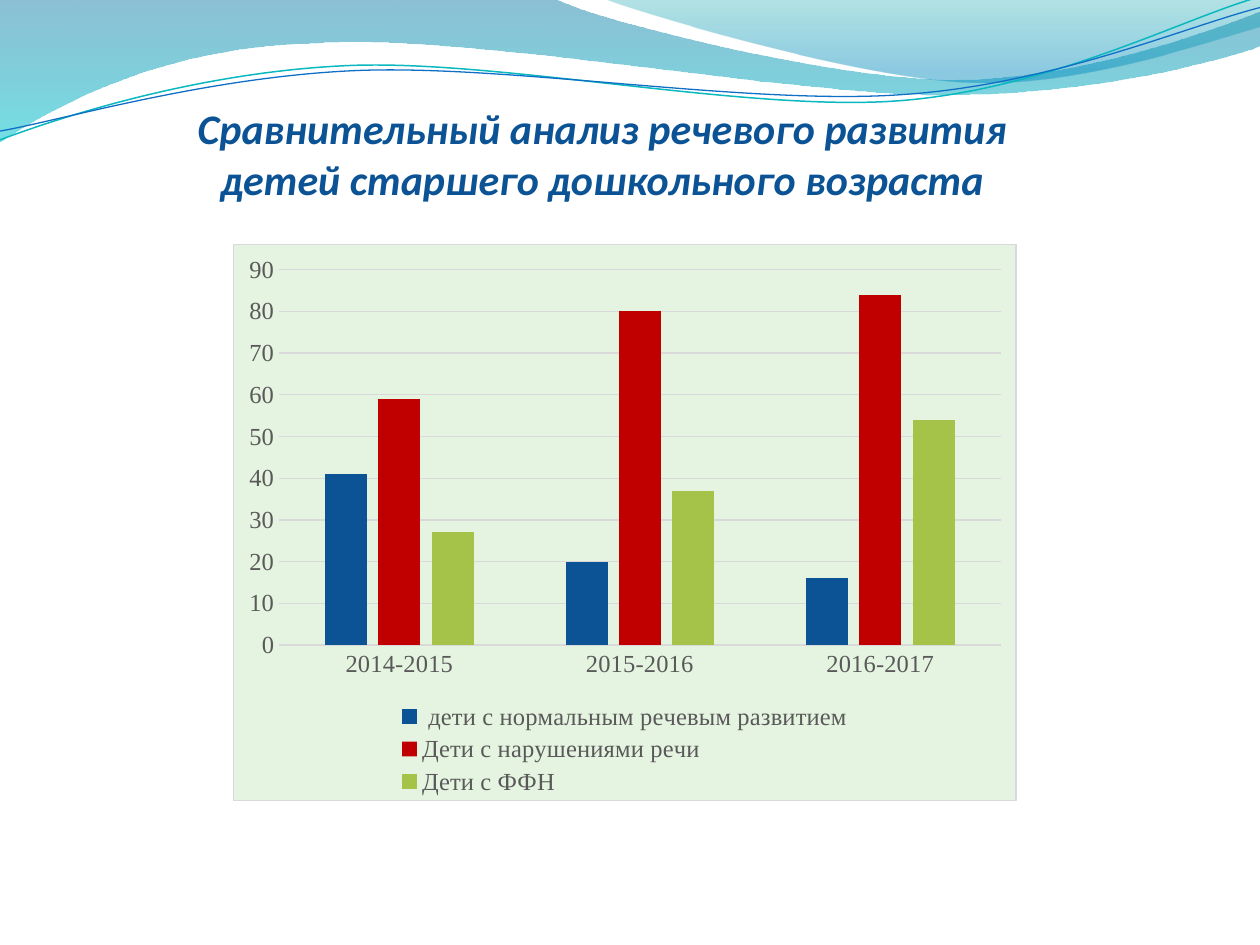
from math import cos, radians, sin

from lxml import etree
from pptx import Presentation
from pptx.chart.data import CategoryChartData
from pptx.dml.color import RGBColor
from pptx.enum.chart import XL_CHART_TYPE, XL_LEGEND_POSITION, XL_TICK_MARK
from pptx.enum.text import MSO_ANCHOR, PP_ALIGN
from pptx.oxml import parse_xml
from pptx.oxml.ns import nsdecls, qn
from pptx.util import Pt

COLUMNS = XL_CHART_TYPE.COLUMN_CLUSTERED
LEGEND_BOTTOM = XL_LEGEND_POSITION.BOTTOM
NO_TICK = XL_TICK_MARK.NONE
CENTER = PP_ALIGN.CENTER
ANCHOR_BOTTOM = MSO_ANCHOR.BOTTOM

THEME = {
    "title": "0B5394", "title_font": "Calibri", "title_size": 24,
    "chart_text": "595959", "chart_font": "Times New Roman", "chart_size": 14,
    "grid": "D9D9D9", "grid_width": 0.75, "chart_fill": "E5F4E0",
    "series": ["0B5394", "C00000", "A5C249"],
}

TITLE = "Сравнительный анализ речевого развития детей старшего дошкольного возраста"
TITLE_BOX = (87.84, 54.4, 512.64, 61.92)
CHART_BOX = (133.2, 139.5, 447.84, 318.24)
YEARS = ["2014-2015", "2015-2016", "2016-2017"]
SERIES = [
    (" дети с нормальным речевым развитием", (41, 20, 16)),
    ("Дети с нарушениями речи", (59, 80, 84)),
    ("Дети с ФФН", (27, 37, 54)),
]

# Outlines in points: a pair is a straight step, six numbers are a Bézier step.
# Gradient stops are (position, colour, opacity in percent).
BANDS = [
    {"outline": [(0, 0), (316.8, -0.72),
                 (342.72, 12.24, 478.08, 45.36, 545.76, 45.36),
                 (614.16, 45.36, 689.76, 18.72, 720, 6.48), (720.72, 25.92),
                 (707.76, 31.68, 626.4, 54.72, 537.12, 54),
                 (447.84, 54, 275.04, 20.16, 185.04, 24.48),
                 (92.88, 25.92, 33.12, 59.76, -0.72, 81.36)],
     "stops": [(0, "0074A1", 45), (1, "00C6CF", 55)]},
    {"outline": [(344.88, -0.72),
                 (366.48, 7.92, 491.04, 44.64, 553.68, 46.8),
                 (616.32, 49.68, 691.92, 23.04, 720, 15.12), (720, 0)],
     "stops": [(0, "00A1A9", 30), (0.8, "008BBF", 45)]},
]
WAVE_ANGLE = -2.7
WAVES = [
    {"outline": [(0, 79.92),
                 (34.56, 66.96, 113.76, 41.04, 199.44, 37.44),
                 (284.4, 33.84, 426.96, 64.08, 513.36, 57.6),
                 (599.76, 51.12, 675.36, 10.8, 718.56, -1.44)],
     "center": (359.28, 41.4), "color": "0AB8BF", "width": 0.85},
    {"outline": [(0, 74.88),
                 (33.84, 69.12, 118.08, 43.92, 203.76, 40.32),
                 (290.16, 36.72, 429.84, 60.48, 516.24, 54),
                 (601.92, 48.24, 677.52, 15.12, 720, 4.32)],
     "center": (359.64, 42.48), "color": "0F6FC6", "width": 0.75},
]


def rgb(value):
    return RGBColor.from_string(value)


def step_points(step):
    return list(zip(step[::2], step[1::2]))


def turn_step(step, center, angle):
    """Turn every point of a step clockwise about the center."""
    cosine, sine = cos(radians(angle)), sin(radians(angle))
    turned = []
    for x, y in step_points(step):
        across, down = x - center[0], y - center[1]
        turned += [center[0] + across * cosine - down * sine,
                   center[1] + across * sine + down * cosine]
    return tuple(turned)


def add_outline(slide, outline, close):
    """Build a freeform, joining the three points of each Bézier step into a curve."""
    start, *rest = [(Pt(x), Pt(y)) for step in outline for x, y in step_points(step)]
    builder = slide.shapes.build_freeform(*start)
    builder.add_line_segments(rest, close=close)
    shape = builder.convert_to_shape()
    shape.shadow.inherit = False
    lines = iter(list(shape._element.spPr.iter(qn("a:lnTo"))))
    for step in outline[1:]:
        segments = [next(lines) for _ in step_points(step)]
        if len(segments) == 3:
            curve = etree.Element(qn("a:cubicBezTo"))
            segments[0].addprevious(curve)
            for segment in segments:
                curve.append(segment[0])
                segment.getparent().remove(segment)
    return shape


def add_band(slide, outline, stops):
    shape = add_outline(slide, outline, close=True)
    shape.line.fill.background()
    shape.fill.gradient()
    shape.fill.gradient_angle = 270
    for gradient_stop, (position, color, _) in zip(shape.fill.gradient_stops, stops):
        gradient_stop.position = position
        gradient_stop.color.rgb = rgb(color)
    colors = shape._element.spPr.iter(qn("a:srgbClr"))
    for element, (_, _, opacity) in zip(colors, stops):
        etree.SubElement(element, qn("a:alpha")).set("val", str(opacity * 1000))


def add_wave(slide, outline, center, color, width):
    level = [turn_step(step, center, -WAVE_ANGLE) for step in outline]
    shape = add_outline(slide, level, close=False)
    shape.rotation = WAVE_ANGLE
    shape.fill.background()
    shape.line.color.rgb = rgb(color)
    shape.line.width = Pt(width)


def format_font(font, name, size, color, bold=False, italic=False):
    font.name, font.size = name, Pt(size)
    font.bold, font.italic = bold, italic
    font.color.rgb = rgb(color)


def add_text(slide, text, box, align, anchor, margins, **font_format):
    frame = slide.shapes.add_textbox(*map(Pt, box)).text_frame
    frame.word_wrap = True
    frame.vertical_anchor = anchor
    (frame.margin_left, frame.margin_top,
     frame.margin_right, frame.margin_bottom) = map(Pt, margins)
    paragraph = frame.paragraphs[0]
    paragraph.alignment = align
    run = paragraph.add_run()
    run.text = text
    format_font(run.font, **font_format)


def style_grid_line(line):
    line.color.rgb = rgb(THEME["grid"])
    line.width = Pt(THEME["grid_width"])


def fill_chart_area(chart):
    area = parse_xml(
        f'<c:spPr {nsdecls("c", "a")}>'
        f'<a:solidFill><a:srgbClr val="{THEME["chart_fill"]}"/></a:solidFill>'
        f'<a:ln w="{Pt(THEME["grid_width"])}"><a:solidFill>'
        f'<a:srgbClr val="{THEME["grid"]}"/></a:solidFill></a:ln></c:spPr>')
    chart._chartSpace.find(qn("c:chart")).addnext(area)


def add_speech_chart(slide):
    data = CategoryChartData()
    data.categories = YEARS
    for name, values in SERIES:
        data.add_series(name, values)
    chart = slide.shapes.add_chart(COLUMNS, *map(Pt, CHART_BOX), data).chart
    chart.has_title = False
    chart.has_legend = True
    chart.legend.position = LEGEND_BOTTOM
    chart.legend.include_in_layout = False
    for part in (chart, chart.legend, chart.category_axis.tick_labels,
                 chart.value_axis.tick_labels):
        format_font(part.font, THEME["chart_font"], THEME["chart_size"],
                    THEME["chart_text"])
    fill_chart_area(chart)

    for axis in (chart.category_axis, chart.value_axis):
        axis.major_tick_mark = axis.minor_tick_mark = NO_TICK
    style_grid_line(chart.category_axis.format.line)
    chart.value_axis.format.line.fill.background()
    style_grid_line(chart.value_axis.major_gridlines.format.line)

    plot = chart.plots[0]
    plot.vary_by_categories = False
    plot.gap_width, plot.overlap = 219, -27
    for series, color in zip(plot.series, THEME["series"]):
        series.format.fill.solid()
        series.format.fill.fore_color.rgb = rgb(color)


def main():
    presentation = Presentation()
    presentation.slide_width, presentation.slide_height = Pt(720), Pt(540)
    slide = presentation.slides.add_slide(presentation.slide_layouts[6])
    for band in BANDS:
        add_band(slide, **band)
    for wave in WAVES:
        add_wave(slide, **wave)
    add_text(slide, TITLE, TITLE_BOX, CENTER, ANCHOR_BOTTOM, (0, 3.6, 0, 0),
             name=THEME["title_font"], size=THEME["title_size"],
             color=THEME["title"], bold=True, italic=True)
    add_speech_chart(slide)
    presentation.save("out.pptx")


if __name__ == "__main__":
    main()
